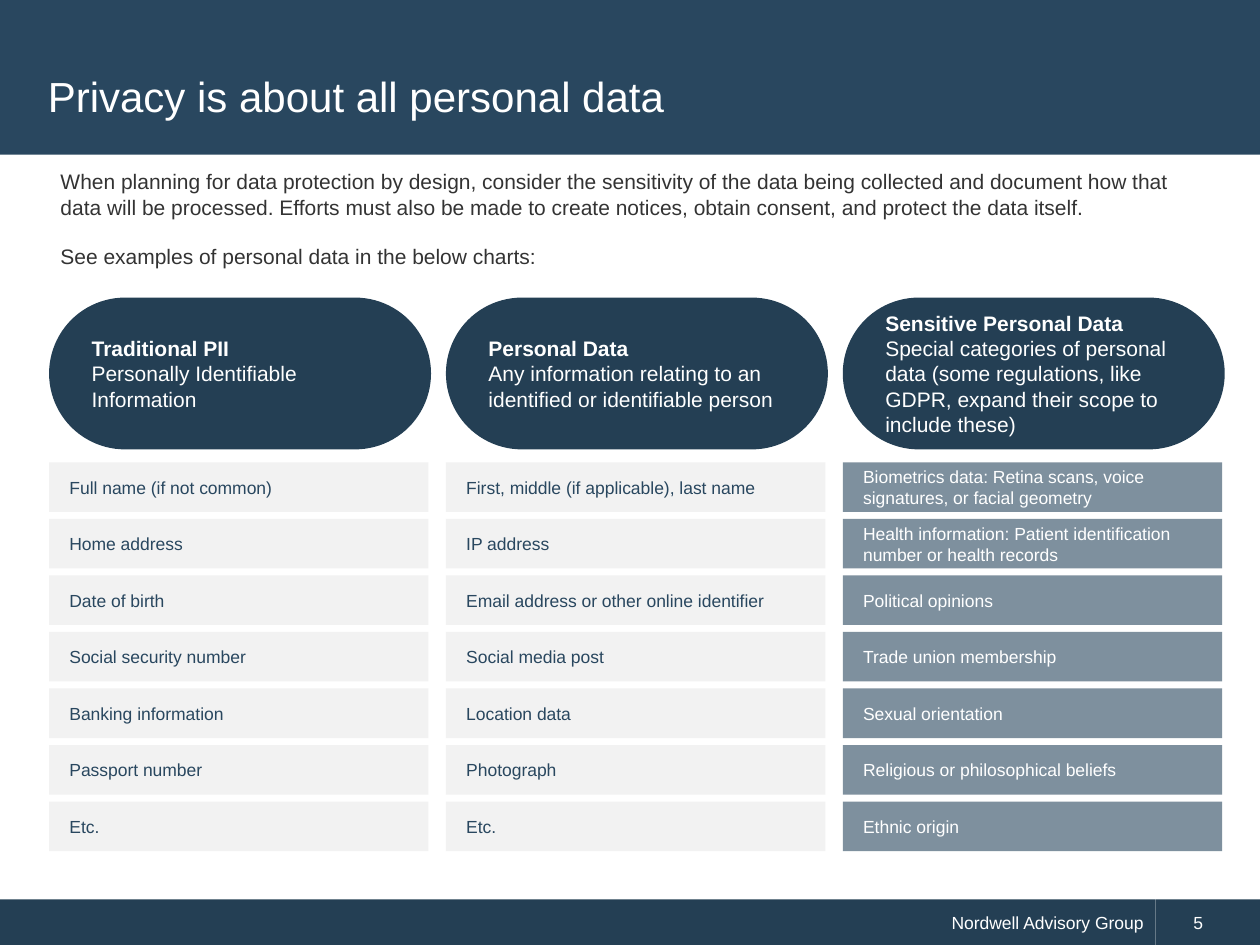
"""Build the slide on categories of personal data."""
from pptx import Presentation
from pptx.dml.color import RGBColor
from pptx.enum.shapes import MSO_SHAPE
from pptx.enum.text import MSO_ANCHOR, MSO_AUTO_SIZE, PP_ALIGN
from pptx.util import Cm, Pt

NAVY = RGBColor(0x24, 0x3F, 0x54)
BLUE = RGBColor(0x29, 0x47, 0x5F)
SLATE = RGBColor(0x7E, 0x90, 0x9E)
PALE = RGBColor(0xF2, 0xF2, 0xF2)
CHARCOAL = RGBColor(0x33, 0x33, 0x33)
WHITE = RGBColor(0xFF, 0xFF, 0xFF)

COLUMN_LEFT, COLUMN_PITCH = 0.99, 8
ROW_TOP, ROW_PITCH = 9.32, 1.14

COLUMNS = [
    ("Traditional PII", "Personally Identifiable Information", PALE, BLUE,
     ["Full name (if not common)", "Home address", "Date of birth",
      "Social security number", "Banking information", "Passport number", "Etc."]),
    ("Personal Data", "Any information relating to an identified or identifiable person",
     PALE, BLUE,
     ["First, middle (if applicable), last name", "IP address",
      "Email address or other online identifier", "Social media post",
      "Location data", "Photograph", "Etc."]),
    ("Sensitive Personal Data",
     "Special categories of personal data (some regulations, like GDPR, "
     "expand their scope to include these)", SLATE, WHITE,
     ["Biometrics data: Retina scans, voice signatures, or facial geometry",
      "Health information: Patient identification number or health records",
      "Political opinions", "Trade union membership", "Sexual orientation",
      "Religious or philosophical beliefs", "Ethnic origin"]),
]


def write(box, lines, size, color, align=PP_ALIGN.LEFT, **frame_format):
    """Write lines into a shape with one font and the given frame settings."""
    frame = box.text_frame
    settings = {"word_wrap": True, "vertical_anchor": MSO_ANCHOR.MIDDLE} | frame_format
    for name, value in settings.items():
        setattr(frame, name, value)
    frame.text = "\n".join(lines)
    for para in frame.paragraphs:
        para.alignment = align
        for span in para.runs:
            for name, value in {"name": "Arial", "size": Pt(size)}.items():
                setattr(span.font, name, value)
            span.font.color.rgb = color


def add_block(page, left, top, width, height, fill, kind=MSO_SHAPE.RECTANGLE):
    """Add a plain filled shape, measured in centimetres."""
    box = page.shapes.add_shape(kind, Cm(left), Cm(top), Cm(width), Cm(height))
    box.shadow.inherit = False
    box.fill.solid()
    box.fill.fore_color.rgb = fill
    box.line.fill.background()
    return box


deck = Presentation()
deck.slide_width, deck.slide_height = Cm(25.4), Cm(19.05)
page = deck.slides.add_slide(deck.slide_layouts[5])

footer = add_block(page, 0, 18.13, 23.3, 0.93, NAVY)
write(footer, ["Nordwell Advisory Group"], 10, WHITE, PP_ALIGN.RIGHT)
page_number = add_block(page, 23.3, 18.13, 2.1, 0.93, NAVY)
write(page_number, ["5"], 10, WHITE, margin_left=Cm(0.76))

banner = add_block(page, 0, 0, 25.4, 3.12, BLUE)
title = page.shapes.title
banner.element.addnext(title.element)
place = {"left": 0.71, "top": 0.71, "width": 23.95, "height": 2.44}
for name, value in place.items():
    setattr(title, name, Cm(value))
write(title, ["Privacy is about all personal data"], 24, WHITE,
      auto_size=MSO_AUTO_SIZE.NONE)

insets = {"margin_left": Cm(0.41), "margin_right": Cm(0.25)}
for column, (heading, summary, fill, ink, examples) in enumerate(COLUMNS):
    left = COLUMN_LEFT + column * COLUMN_PITCH
    header = add_block(page, left, 6, 7.7, 3.06, NAVY, MSO_SHAPE.ROUNDED_RECTANGLE)
    header.adjustments[0] = 0.5
    write(header, [heading, summary], 12, WHITE, **insets)
    header.text_frame.paragraphs[0].runs[0].font.bold = True
    for row, example in enumerate(examples):
        cell = add_block(page, left, ROW_TOP + row * ROW_PITCH, 7.65, 1, fill)
        write(cell, [example], 10, ink, **insets)

intro = page.shapes.add_textbox(Cm(0.97), Cm(3.28), Cm(23.7), Cm(2.31))
write(intro, [
    "When planning for data protection by design, consider the sensitivity of the data "
    "being collected and document how that data will be processed. Efforts must also be "
    "made to create notices, obtain consent, and protect the data itself.",
    "See examples of personal data in the below charts:",
], 12, CHARCOAL, vertical_anchor=MSO_ANCHOR.TOP)
intro.text_frame.paragraphs[1].space_before = Pt(14)

deck.save("out.pptx")
